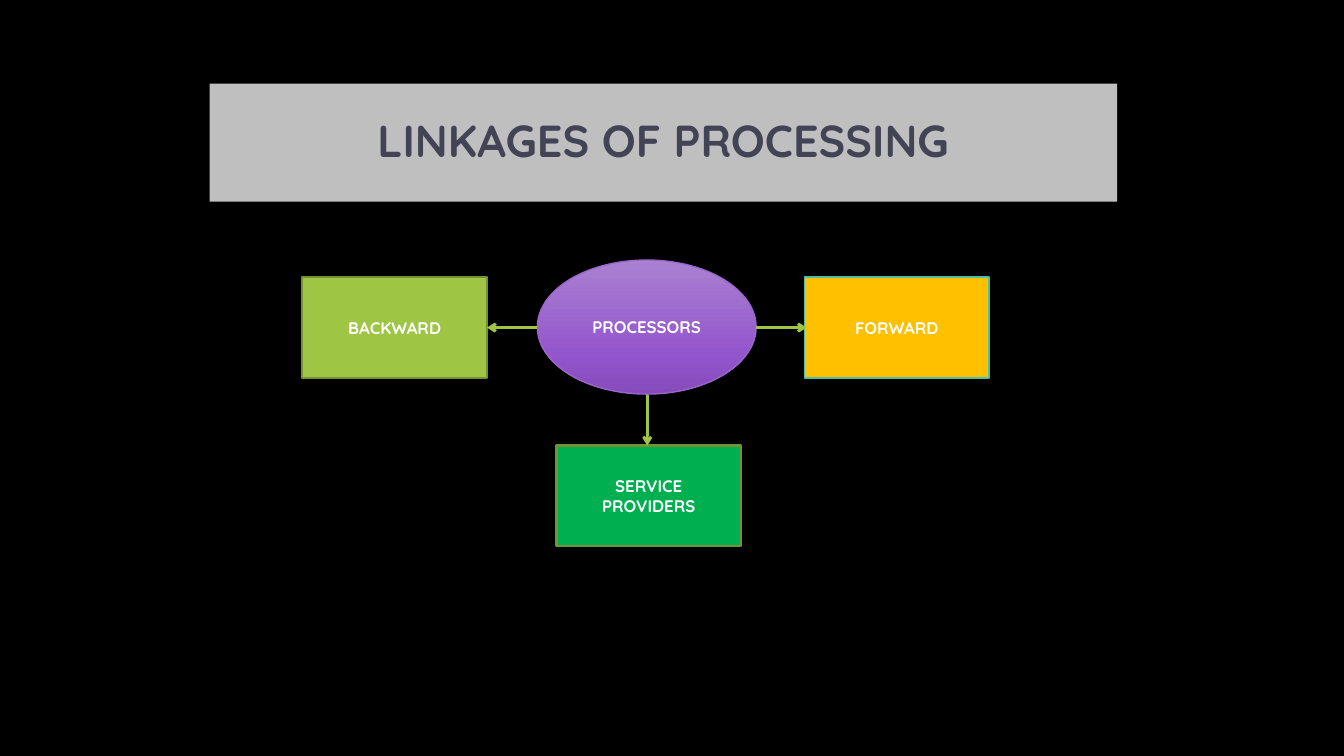
"""Build the slide on the linkages of processing."""
import copy
import dataclasses

import pptx
import pptx.dml.color
import pptx.enum.shapes
import pptx.enum.text
import pptx.oxml
import pptx.oxml.ns
import pptx.slide
import pptx.util

Inches = pptx.util.Inches
Kind = pptx.enum.shapes.MSO_SHAPE
FONT = {"name": "Quicksand", "bold": True}
FRAME = {
    "word_wrap": True,
    "vertical_anchor": pptx.enum.text.MSO_ANCHOR.MIDDLE,
    "margin_left": Inches(0.15),
    "margin_right": Inches(0.15),
}
GREEN = "9EC544"
WIDE, HIGH = 1.83, 1.0
MID = 3.25
SHADES = [(0, "A981D1"), (0.69, "9456CD"), (1, "864BBC")]


@dataclasses.dataclass
class Box:
    text: str
    left: float
    top: float
    fill: str = ""
    line: str = ""
    weight: float = 1.5
    width: float = WIDE
    height: float = HIGH
    kind: Kind = Kind.RECTANGLE
    size: int = 12
    ink: str = "FFFFFF"
    space: float = 1.0


@dataclasses.dataclass
class Arrow:
    start: tuple[float, float]
    end: tuple[float, float]


BOXES = [
    Box("LINKAGES OF PROCESSING", 2.08, 0.83, "BFBFBF", width=9, height=1.17,
        size=32, ink="424456", space=0.9),
    Box("PROCESSORS", 5.33, 2.58, line="9A66CA", weight=1, width=2.17,
        height=1.33, kind=Kind.OVAL),
    Box("FORWARD", 7.98, MID - HIGH / 2, "FFC000", "50BEA3", 1),
    Box("BACKWARD", 3, MID - HIGH / 2, GREEN, "759232"),
    Box("SERVICE PROVIDERS", 5.52, 4.42, "00B050", "759232"),
]
ARROWS = [
    Arrow((5.33, MID), (4.83, MID)),
    Arrow((7.5, MID), (8, MID)),
    Arrow((6.42, 3.92), (6.42, 4.42)),
]


def tint(code: str) -> pptx.dml.color.RGBColor:
    """Turn a hex string into a colour."""
    return pptx.dml.color.RGBColor.from_string(code)


def apply(target: object, values: dict[str, object]) -> None:
    """Set every named value on the target."""
    for name, value in values.items():
        setattr(target, name, value)


def shade(shape: pptx.shapes.autoshape.Shape) -> None:
    """Fill the shape from top to bottom with the purple shades."""
    shape.fill.gradient()
    shape.fill.gradient_angle = 270
    stops = shape._element.spPr.find(".//" + pptx.oxml.ns.qn("a:gsLst"))
    stops.append(copy.deepcopy(stops[-1]))
    for stop, (place, code) in zip(shape.fill.gradient_stops, SHADES):
        stop.position = place
        stop.color.rgb = tint(code)


def draw_box(slide: pptx.slide.Slide, box: Box) -> None:
    """Draw one shape with its label."""
    area = map(Inches, (box.left, box.top, box.width, box.height))
    shape = slide.shapes.add_shape(box.kind, *area)
    shape.shadow.inherit = False
    if box.fill:
        shape.fill.solid()
        shape.fill.fore_color.rgb = tint(box.fill)
    else:
        shade(shape)
    if box.line:
        shape.line.color.rgb = tint(box.line)
        shape.line.width = pptx.util.Pt(box.weight)
    else:
        shape.line.fill.background()
    apply(shape.text_frame, FRAME)
    para = shape.text_frame.paragraphs[0]
    apply(para, {"text": box.text, "line_spacing": box.space,
                 "alignment": pptx.enum.text.PP_ALIGN.CENTER})
    font = para.runs[0].font
    apply(font, FONT | {"size": pptx.util.Pt(box.size)})
    font.color.rgb = tint(box.ink)


def draw_arrow(slide: pptx.slide.Slide, arrow: Arrow) -> None:
    """Draw one straight arrow."""
    ends = map(Inches, arrow.start + arrow.end)
    link = slide.shapes.add_connector(
        pptx.enum.shapes.MSO_CONNECTOR.STRAIGHT, *ends)
    link.line.color.rgb = tint(GREEN)
    link.line.width = pptx.util.Pt(2)
    head = pptx.oxml.parse_xml(
        f'<a:tailEnd {pptx.oxml.ns.nsdecls("a")} type="arrow"/>')
    link.line._get_or_add_ln().append(head)
    link._element.spPr.append(pptx.oxml.parse_xml(
        f'<a:effectLst {pptx.oxml.ns.nsdecls("a")}/>'))


def main() -> None:
    """Make the deck and save it."""
    deck = pptx.Presentation()
    apply(deck, {"slide_width": Inches(13.33), "slide_height": Inches(7.5)})
    slide = deck.slides.add_slide(deck.slide_layouts[6])
    slide.background.fill.solid()
    slide.background.fill.fore_color.rgb = tint("000000")
    for box in BOXES:
        draw_box(slide, box)
    for arrow in ARROWS:
        draw_arrow(slide, arrow)
    deck.save("out.pptx")


if __name__ == "__main__":
    main()
